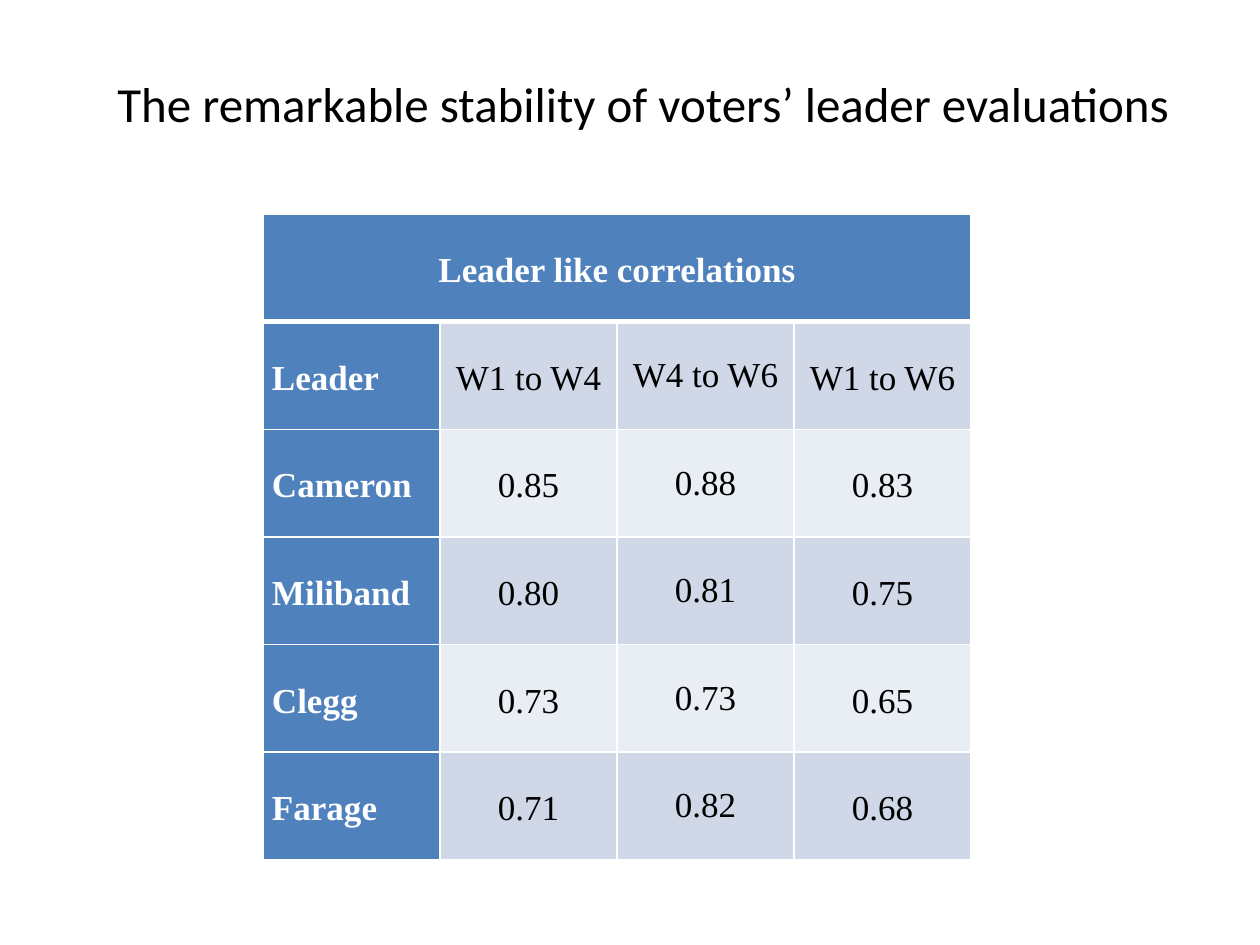
from lxml import etree
from pptx import Presentation, util as u
from pptx.dml.color import RGBColor
from pptx.enum import text
from pptx.oxml.ns import qn

PX = 914400 / 126

BLACK = RGBColor(0x00, 0x00, 0x00)
WHITE = RGBColor(0xFF, 0xFF, 0xFF)
BLUE = RGBColor(0x4F, 0x81, 0xBD)
BANDS = (RGBColor(0xE9, 0xED, 0xF4), RGBColor(0xD0, 0xD8, 0xE8))

TITLE = "The remarkable stability of voters’ leader evaluations"
HEADING = "Leader like correlations"
ROWS = [
    ("Leader", "W1 to W4", "W4 to W6", "W1 to W6"),
    ("Cameron", "0.85", "0.88", "0.83"),
    ("Miliband", "0.80", "0.81", "0.75"),
    ("Clegg", "0.73", "0.73", "0.65"),
    ("Farage", "0.71", "0.82", "0.68"),
]
TITLE_FONT = {"name": "Calibri", "size": u.Pt(28)}
TABLE_FONT = {"name": "Times New Roman", "size": u.Pt(20)}
TITLE_AREA = (105, 67, 1101, 72)
TABLE_AREA = (263, 214, 708, 646)
LABEL_INDENT = 9
SINGLE_SPACED_COLUMN = 2


def px(length):
    return u.Emu(round(length * PX))


def write(para, words, color, font):
    span = para.add_run()
    span.text = words
    span.font.color.rgb = color
    for name, value in font.items():
        setattr(span.font, name, value)


def add_borders(cell, widths):
    """Draw white borders; widths maps a side (L, R, T, B) to points."""
    properties = cell._tc.get_or_add_tcPr()
    for side, width in widths.items():
        line = etree.SubElement(properties, qn(f"a:ln{side}"), w=str(u.Pt(width)))
        fill = etree.SubElement(line, qn("a:solidFill"))
        etree.SubElement(fill, qn("a:srgbClr"), val=str(WHITE))


def fill_cell(cell, row, column, words):
    is_label = row > 0 and column == 0
    is_blue = row == 0 or is_label
    add_borders(cell, {"L": 1, "R": 1, "T": 3 if row == 1 else 1, "B": 3 if row == 0 else 1})
    cell.fill.solid()
    cell.fill.fore_color.rgb = BLUE if is_blue else BANDS[row % 2]
    layout = {
        "margin_left": px(LABEL_INDENT if is_label else 0),
        "margin_right": 0,
        "margin_top": 0,
        "margin_bottom": 0,
        "vertical_anchor": text.MSO_ANCHOR.MIDDLE,
    }
    for name, value in layout.items():
        setattr(cell, name, value)
    if not words:
        return
    para = cell.text_frame.paragraphs[0]
    para.alignment = text.PP_ALIGN.LEFT if is_label else text.PP_ALIGN.CENTER
    if column != SINGLE_SPACED_COLUMN:
        para.line_spacing = 1.15
    write(para, words, WHITE if is_blue else BLACK, {**TABLE_FONT, "bold": is_blue})


def add_title(page):
    frame = page.shapes.add_textbox(*map(px, TITLE_AREA)).text_frame
    frame.word_wrap = True
    write(frame.paragraphs[0], TITLE, BLACK, TITLE_FONT)


def add_correlations(page):
    columns = len(ROWS[0])
    grid = [(HEADING,) + ("",) * (columns - 1)] + ROWS
    table = page.shapes.add_table(len(grid), columns, *map(px, TABLE_AREA)).table
    table.cell(0, 0).merge(table.cell(0, columns - 1))
    for row, entries in enumerate(grid):
        for column, words in enumerate(entries):
            fill_cell(table.cell(row, column), row, column, words)


def main():
    deck = Presentation()
    deck.slide_width, deck.slide_height = px(1260), px(945)
    page = deck.slides.add_slide(deck.slide_layouts[6])
    add_correlations(page)
    add_title(page)
    deck.save("out.pptx")


if __name__ == "__main__":
    main()
